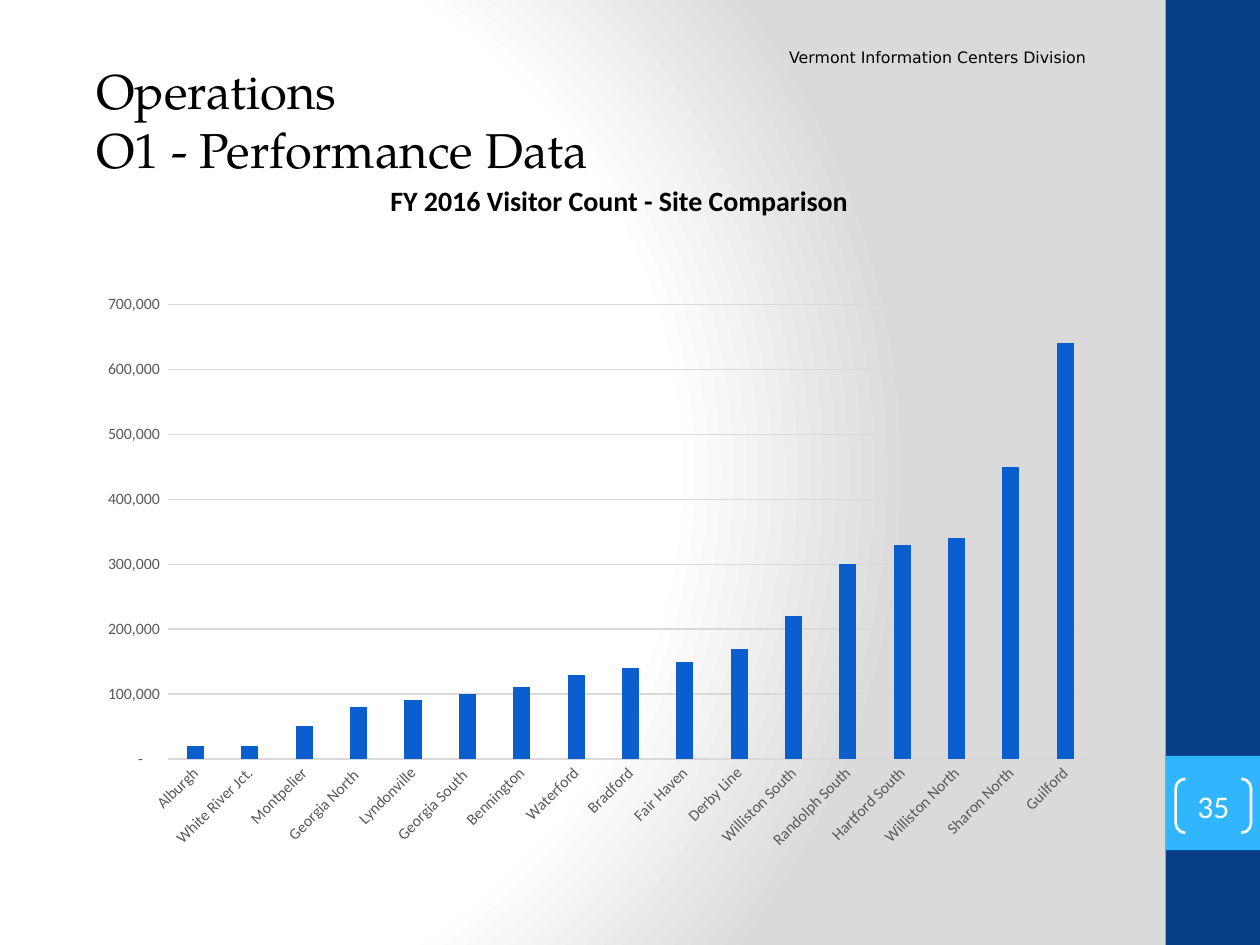
from lxml import etree
from pptx import Presentation
from pptx import util as u
from pptx.chart.data import CategoryChartData
from pptx.dml.color import RGBColor
from pptx.enum import chart as ch, shapes, text
from pptx.oxml.ns import qn

SIZE = (25.4, 19.05)
BACK = {"stops": [(69, "FFFFFF"), (100, "DADADA")],
        "focus": {"l": 20, "t": 50, "r": 100, "b": 50}}
BANDS = [((23.5, 0, 1.9, 19.05), "073E87"), ((23.5, 15.24, 1.9, 1.9), "31B6FD")]
PAGE = ("35", (23.7, 15.7, 1.52, 1.09))
TEXTS = [
    (["Operations", "O1 - Performance Data"], (1.69, 1.09, 15.24, 3.43),
     "TeX Gyre Pagella", 28, False),
    (["Vermont Information Centers Division"], (15.66, 0.84, 6.99, 0.64),
     "DejaVu Sans", 9, False),
    (["FY 2016 Visitor Count - Site Comparison"], (7.62, 3.57, 9.8, 0.94),
     "Calibri", 16, True),
]
PLOT = (1.69, 5.72, 20.75, 11.63)
COUNTS = [
    ("Alburgh", 20000), ("White River Jct.", 20000), ("Montpelier", 50000),
    ("Georgia North ", 80000), ("Lyndonville", 90000), ("Georgia South ", 100000),
    ("Bennington", 110000), ("Waterford", 130000), ("Bradford", 140000),
    ("Fair Haven", 150000), ("Derby Line", 170000), ("Williston South", 220000),
    ("Randolph South", 300000), ("Hartford South", 330000),
    ("Williston North", 340000), ("Sharon North", 450000), ("Guilford", 640000),
]
FORMAT = '_(* #,##0_);_(* \\(#,##0\\);_(* "-"??_);_(@_)'


def color(code):
    return RGBColor.from_string(code)


def box(area):
    return [u.Cm(n) for n in area]


def style(font, name, size, code, bold=False):
    font.name, font.size, font.bold = name, u.Pt(size), bold
    font.color.rgb = color(code)


def stroke(line, code, width=0.75):
    line.color.rgb = color(code)
    line.width = u.Pt(width)


def shade(slide):
    slide.background.fill.solid()
    old = slide.element.find(".//" + qn("p:bgPr")).find(qn("a:solidFill"))
    grad = etree.Element(qn("a:gradFill"), rotWithShape="1")
    stops = etree.SubElement(grad, qn("a:gsLst"))
    for pos, code in BACK["stops"]:
        stop = etree.SubElement(stops, qn("a:gs"), pos=str(pos * 1000))
        etree.SubElement(stop, qn("a:srgbClr"), val=code)
    way = etree.SubElement(grad, qn("a:path"))
    way.set("path", "circle")
    focus = {side: str(n * 1000) for side, n in BACK["focus"].items()}
    etree.SubElement(way, qn("a:fillToRect"), focus)
    old.getparent().replace(old, grad)


def add_bands(slide):
    for area, code in BANDS:
        band = slide.shapes.add_shape(shapes.MSO_SHAPE.RECTANGLE, *box(area))
        band.shadow.inherit = False
        band.fill.solid()
        band.fill.fore_color.rgb = color(code)
        band.line.fill.background()


def add_page(slide):
    label, area = PAGE
    mark = slide.shapes.add_shape(shapes.MSO_SHAPE.DOUBLE_BRACKET, *box(area))
    mark.shadow.inherit = False
    mark.adjustments[0] = 0.18
    mark.fill.background()
    stroke(mark.line, "FFFFFF", 1.5)
    frame = mark.text_frame
    frame.margin_left = frame.margin_right = 0
    frame.margin_top = frame.margin_bottom = 0
    frame.vertical_anchor = text.MSO_ANCHOR.MIDDLE
    frame.text = label
    para = frame.paragraphs[0]
    para.alignment = text.PP_ALIGN.CENTER
    style(para.runs[0].font, "Calibri", 18, "FFFFFF")


def add_texts(slide):
    for lines, area, name, size, bold in TEXTS:
        frame = slide.shapes.add_textbox(*box(area)).text_frame
        frame.word_wrap = True
        frame.text = "\n".join(lines)
        for para in frame.paragraphs:
            style(para.runs[0].font, name, size, "000000", bold)


def add_plot(slide):
    data = CategoryChartData(number_format="#,##0")
    data.categories = [site for site, _ in COUNTS]
    data.add_series("Series 1", [count for _, count in COUNTS])
    chart = slide.shapes.add_chart(
        ch.XL_CHART_TYPE.COLUMN_CLUSTERED, *box(PLOT), data).chart
    chart.has_title = chart.has_legend = False
    style(chart.font, "Calibri", 10, "000000")
    plot = chart.plots[0]
    plot.gap_width, plot.overlap = 219, -27
    plot.vary_by_categories = False
    fill = plot.series[0].format.fill
    fill.solid()
    fill.fore_color.rgb = color("0B5ECE")

    sites, counts = chart.category_axis, chart.value_axis
    for axis in (sites, counts):
        axis.major_tick_mark = axis.minor_tick_mark = ch.XL_TICK_MARK.NONE
        style(axis.tick_labels.font, "Calibri", 9, "595959")
    stroke(sites.format.line, "D9D9D9")
    sites._element.find(".//" + qn("a:bodyPr")).set("rot", "-2700000")
    counts.minimum_scale, counts.maximum_scale = 0, 700000
    counts.major_unit = 100000
    counts.format.line.fill.background()
    stroke(counts.major_gridlines.format.line, "D9D9D9")
    counts.tick_labels.number_format = FORMAT
    counts.tick_labels.number_format_is_linked = False


def main():
    deck = Presentation()
    deck.slide_width, deck.slide_height = box(SIZE)
    slide = deck.slides.add_slide(deck.slide_layouts[6])
    shade(slide)
    add_bands(slide)
    add_page(slide)
    add_texts(slide)
    add_plot(slide)
    deck.save("out.pptx")


if __name__ == "__main__":
    main()
